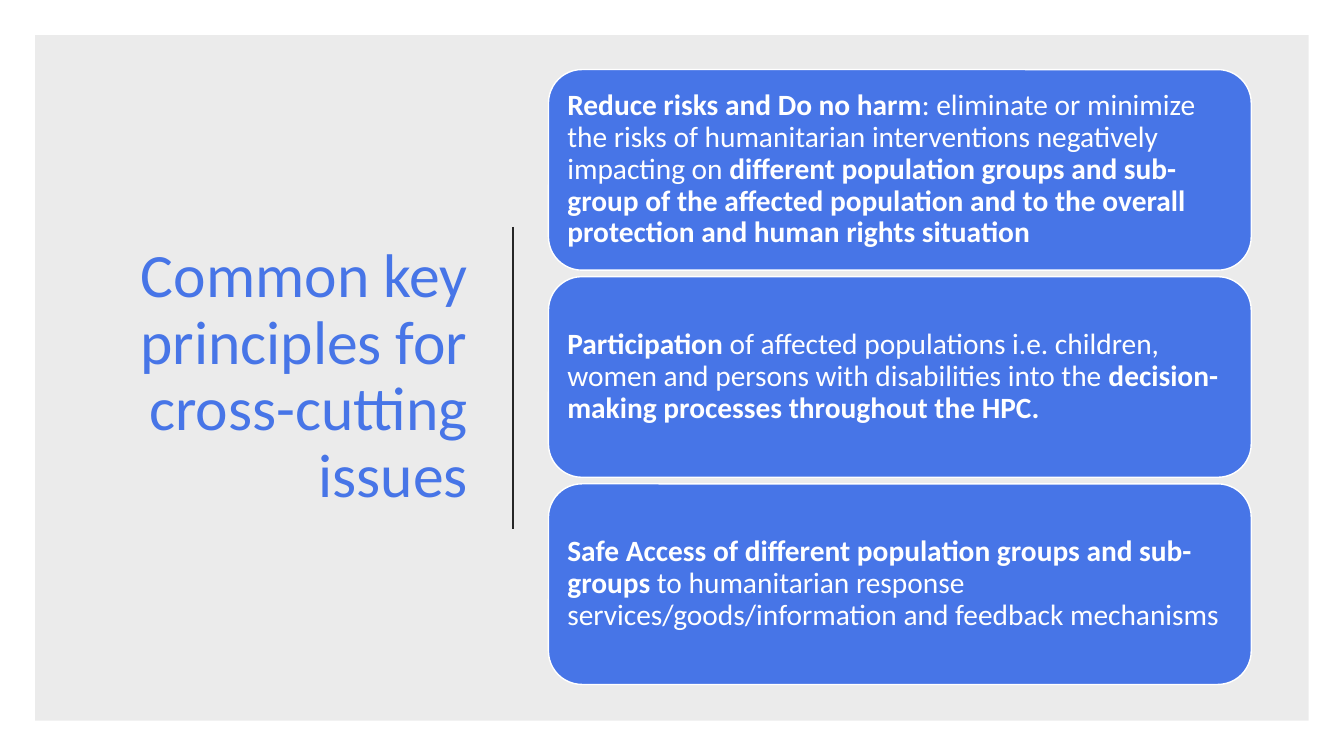
from dataclasses import dataclass

from pptx import Presentation
from pptx.dml.color import RGBColor
from pptx.enum.shapes import MSO_CONNECTOR as Connector, MSO_SHAPE as Shape
from pptx.enum.text import MSO_ANCHOR as Anchor, PP_ALIGN as Align
from pptx.oxml.ns import qn
from pptx.util import Inches, Pt
from lxml.etree import SubElement


@dataclass(frozen=True)
class Theme:
    font: str = "Calibri"
    accent: RGBColor = RGBColor(0x47, 0x75, 0xE7)
    white: RGBColor = RGBColor(0xFF, 0xFF, 0xFF)
    black: RGBColor = RGBColor(0x00, 0x00, 0x00)
    rule: RGBColor = RGBColor(0x26, 0x26, 0x26)
    panel_opacity: int = 8
    title_size: int = 44
    body_size: int = 21
    line_spacing: float = 0.9


class SlideBuilder:
    def __init__(self, slide, theme):
        self.shapes = slide.shapes
        self.theme = theme

    def add_text(self, frame, spans, size, color, align):
        """Fill the frame with one paragraph of (text, bold) spans."""
        frame.word_wrap = True
        frame.vertical_anchor = Anchor.MIDDLE
        para = frame.paragraphs[0]
        para.alignment = align
        para.line_spacing = self.theme.line_spacing
        for text, bold in spans:
            span = para.add_run()
            span.text = text
            span.font.name = self.theme.font
            span.font.size = Pt(size)
            span.font.bold = bold
            span.font.color.rgb = color

    def shape(self, kind, left, top, width, height, fill):
        box = self.shapes.add_shape(
            kind, Inches(left), Inches(top), Inches(width), Inches(height))
        box.shadow.inherit = False
        box.fill.solid()
        box.fill.fore_color.rgb = fill
        return box

    def panel(self, left, top, width, height):
        """Add a translucent backdrop without an outline."""
        box = self.shape(Shape.RECTANGLE, left, top, width, height, self.theme.black)
        box.line.fill.background()
        color = box._element.spPr.find(qn("a:solidFill")).find(qn("a:srgbClr"))
        SubElement(color, qn("a:alpha"), val=str(self.theme.panel_opacity * 1000))

    def title(self, text, left, top, width, height):
        box = self.shapes.add_textbox(
            Inches(left), Inches(top), Inches(width), Inches(height))
        self.add_text(box.text_frame, [(text, False)], self.theme.title_size,
                      self.theme.accent, Align.RIGHT)

    def divider(self, x, top, bottom):
        line = self.shapes.add_connector(
            Connector.STRAIGHT, Inches(x), Inches(top), Inches(x), Inches(bottom))
        line.line.color.rgb = self.theme.rule
        line.line.width = Pt(1.5)
        SubElement(line._element.spPr, qn("a:effectLst"))

    def card(self, spans, left, top, width, height):
        box = self.shape(Shape.ROUNDED_RECTANGLE, left, top, width, height,
                         self.theme.accent)
        box.line.color.rgb = self.theme.white
        box.line.width = Pt(1)
        frame = box.text_frame
        frame.margin_left = frame.margin_right = Inches(0.09)
        frame.margin_top = frame.margin_bottom = Inches(0.09)
        self.add_text(frame, spans, self.theme.body_size, self.theme.white, Align.LEFT)


PRINCIPLES = [
    [("Reduce risks and Do no harm", True),
     (": eliminate or minimize the risks of humanitarian interventions "
      "negatively impacting on ", False),
     ("different population groups and sub-group of the affected "
      "population and to the overall protection and human rights situation", True)],
    [("Participation", True),
     (" of affected populations i.e. children, women and persons with "
      "disabilities into the ", False),
     ("decision-making processes throughout the HPC.", True)],
    [("Safe Access of different population groups and sub-groups ", True),
     ("to humanitarian response services/goods/information and feedback "
      "mechanisms", False)],
]
FIRST_CARD_TOP, LAST_CARD_TOP = 0.69, 4.8
CARD_PITCH = (LAST_CARD_TOP - FIRST_CARD_TOP) / (len(PRINCIPLES) - 1)


def main():
    deck = Presentation()
    deck.slide_width, deck.slide_height = Inches(13.33), Inches(7.5)
    page = SlideBuilder(deck.slides.add_slide(deck.slide_layouts[6]), Theme())

    page.panel(0.35, 0.35, 12.63, 6.8)
    page.title("Common key principles for cross-cutting issues", 0.92, 1.05, 3.82, 5.39)
    page.divider(5.09, 2.25, 5.25)
    for index, spans in enumerate(PRINCIPLES):
        page.card(spans, 5.44, FIRST_CARD_TOP + index * CARD_PITCH, 6.97, 1.99)

    deck.save("out.pptx")


if __name__ == "__main__":
    main()
